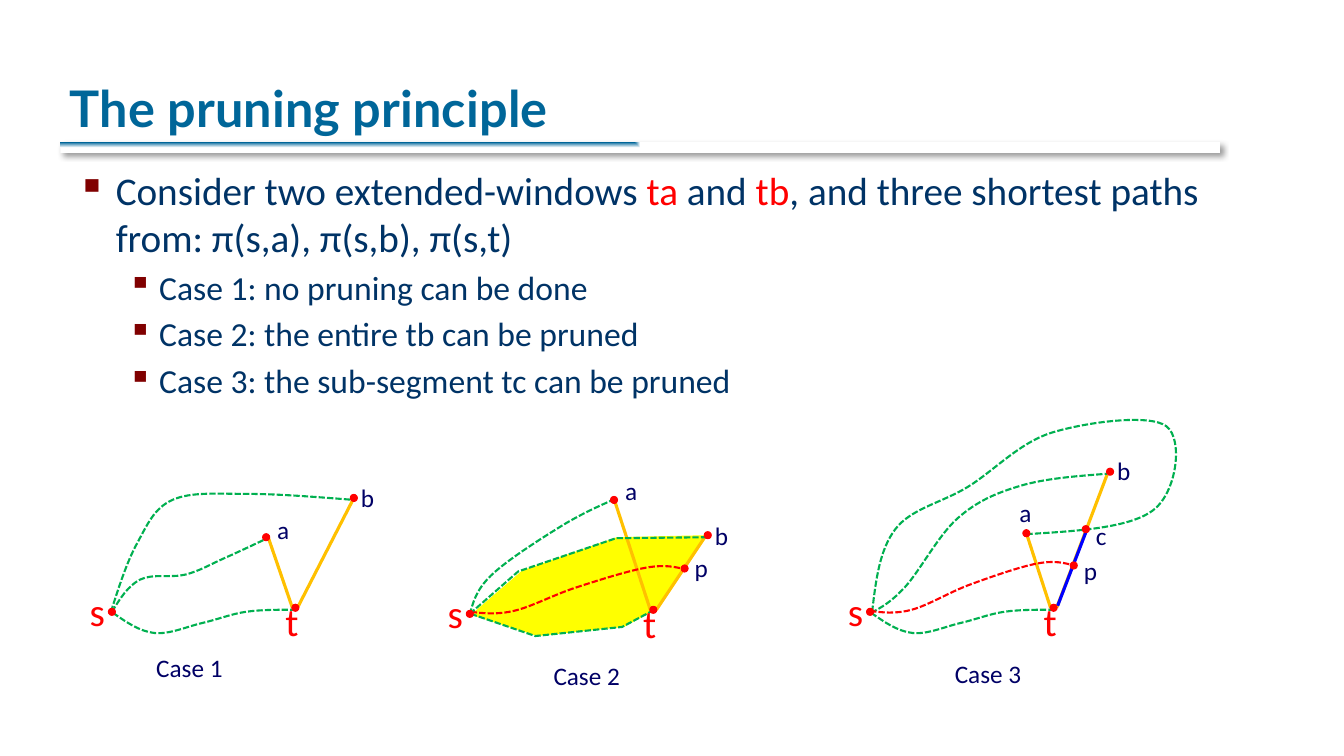
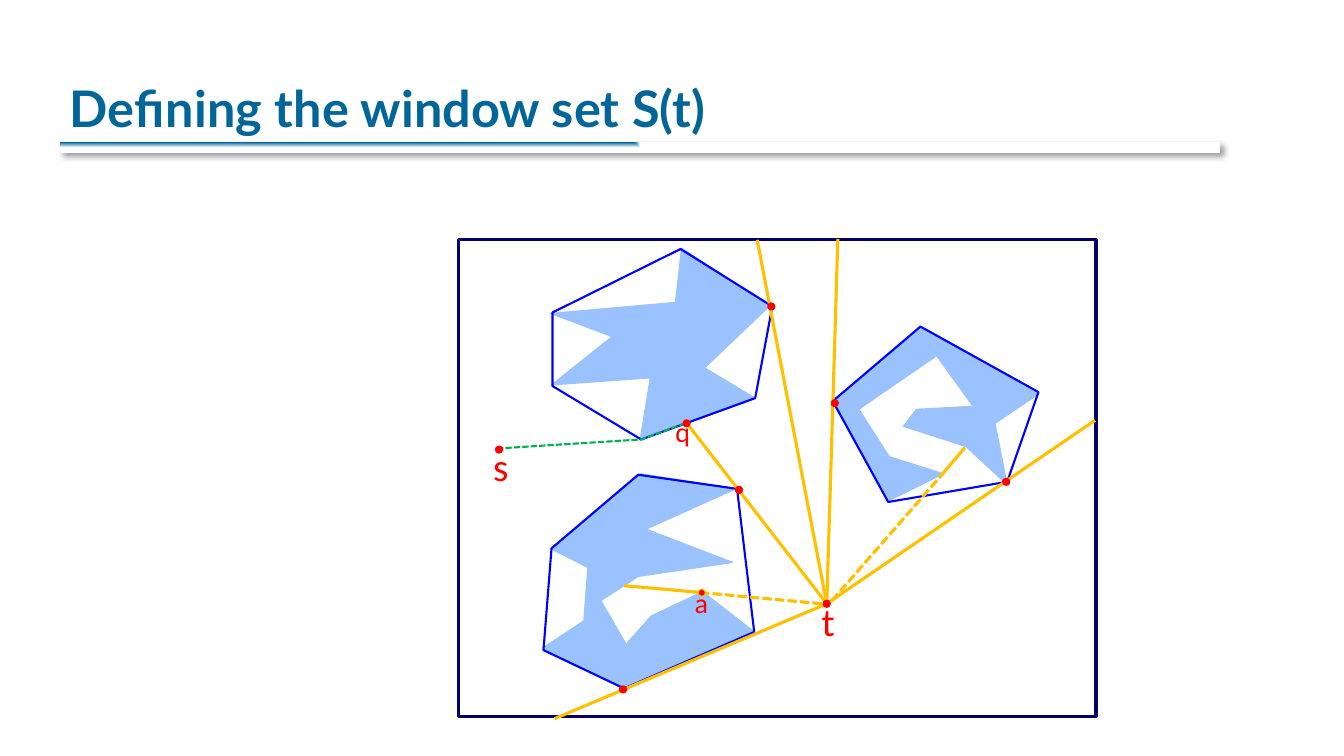
from lxml.etree import SubElement
from pptx import Presentation
from pptx.dml.color import RGBColor
from pptx.enum.dml import MSO_LINE
from pptx.enum.shapes import MSO_CONNECTOR, MSO_SHAPE
from pptx.enum.text import MSO_ANCHOR, MSO_AUTO_SIZE, PP_ALIGN
from pptx.oxml import parse_xml
from pptx.oxml.ns import nsdecls, qn
from pptx.util import Cm, Pt

COLORS = {
    "title": "006699", "body": "003366", "bullet": "800000", "label": "000066",
    "red": "FF0000", "green": "00B050", "orange": "FFC000", "blue": "0000FF",
    "yellow": "FFFF00", "obstacle": "99C2FF", "white": "FFFFFF", "black": "000000",
}
DOT = 0.07


def inch(value):
    """Return a grid length in inches as Cm."""
    return Cm(value * 2.54)


def rgb(name):
    """Look up a named colour."""
    return RGBColor.from_string(COLORS[name])


def add_run(p, text, size=18, color="label", font="Calibri", bold=False, spacing=None):
    """Append a formatted run to a paragraph."""
    r = p.add_run()
    r.text = text
    r.font.name, r.font.size, r.font.bold = font, Pt(size), bold
    r.font.color.rgb = rgb(color)
    if spacing is not None:
        r.font._element.set("spc", str(spacing))


def add_bullet(tf, runs, size, margin, hang):
    """Add a bulleted paragraph made of (text, colour) runs."""
    p = tf.paragraphs[0] if not tf.text else tf.add_paragraph()
    p.space_before = Pt(4.5)
    pPr = p._p.get_or_add_pPr()
    pPr.set("marL", str(inch(margin)))
    pPr.set("indent", str(-inch(hang)))
    SubElement(SubElement(pPr, qn("a:buClr")), qn("a:srgbClr"), val=COLORS["bullet"])
    SubElement(pPr, qn("a:buChar"), char="▪")
    for text, color in runs:
        add_run(p, text, size=size, color=color)


def add_label(s, text, x, y, size=18, color="label", width=0.3):
    """Add a short label whose text starts at x."""
    height = size * 1.22 / 72 + 0.1
    tf = s.shapes.add_textbox(inch(x), inch(y), inch(width), inch(height)).text_frame
    tf.word_wrap = True
    tf.margin_left = tf.margin_right = 0
    add_run(tf.paragraphs[0], text, size=size, color=color)


def add_dot(s, x, y, outline="red"):
    """Add a red point centred on x, y."""
    sp = s.shapes.add_shape(MSO_SHAPE.OVAL, inch(x - DOT / 2), inch(y - DOT / 2),
                            inch(DOT), inch(DOT))
    sp.shadow.inherit = False
    sp.fill.solid()
    sp.fill.fore_color.rgb = rgb("red")
    stroke(sp.line, outline, 0.75)


def stroke(line, color, width, dashed=False):
    """Format an outline."""
    line.color.rgb = rgb(color)
    line.width = Pt(width)
    if dashed:
        line.dash_style = MSO_LINE.SQUARE_DOT


def add_segment(s, start, end, color="orange", dashed=False):
    """Add a straight line between two points."""
    cn = s.shapes.add_connector(MSO_CONNECTOR.STRAIGHT, *map(inch, start + end))
    stroke(cn.line, color, 2.25, dashed)
    SubElement(cn.element.spPr, qn("a:effectLst"))


def add_outline(s, points, close=False, fill=None, color=None, width=1.5, dashed=False):
    """Add a polyline or polygon through the points."""
    pts = [(inch(x), inch(y)) for x, y in points]
    builder = s.shapes.build_freeform(*pts[0], scale=1.0)
    builder.add_line_segments(pts[1:], close=close)
    sp = builder.convert_to_shape()
    sp.shadow.inherit = False
    if fill:
        sp.fill.solid()
        sp.fill.fore_color.rgb = rgb(fill)
    else:
        sp.fill.background()
    if color:
        stroke(sp.line, color, width, dashed)
    else:
        sp.line.fill.background()
    return sp


def add_curve(s, points, color="green"):
    """Add a dashed smooth curve through three or more points."""
    sp = add_outline(s, points, color=color, dashed=True)
    geom = next(sp.element.iter(qn("a:path")))
    pts = [(int(pt.get("x")), int(pt.get("y"))) for pt in geom.iter(qn("a:pt"))]

    def beyond(a, b, c):
        return tuple(2.5 * i - 2 * j + 0.5 * k for i, j, k in zip(a, b, c))

    chain = [beyond(*pts[:3]), *pts, beyond(*pts[:-4:-1])]
    for i, seg in enumerate(geom.findall(qn("a:lnTo"))):
        p0, p1, p2, p3 = chain[i:i + 4]
        first = [b + (c - a) / 6 for a, b, c in zip(p0, p1, p2)]
        second = [c - (d - b) / 6 for b, c, d in zip(p1, p2, p3)]
        geom.remove(seg)
        bezier = SubElement(geom, qn("a:cubicBezTo"))
        for x, y in (first, second, p2):
            SubElement(bezier, qn("a:pt"), x=str(round(x)), y=str(round(y)))


def add_band(s):
    """Add the shaded rule below the title."""
    sp = s.shapes.add_shape(MSO_SHAPE.RECTANGLE, *map(inch, (0.6, 1.41, 11.5, 0.11)))
    sp.line.fill.background()
    spPr = sp.element.spPr
    spPr.insert(2, parse_xml(
        f'<a:gradFill {nsdecls("a")} rotWithShape="0"><a:gsLst>'
        f'<a:gs pos="0"><a:srgbClr val="{COLORS["title"]}"/></a:gs>'
        f'<a:gs pos="100000"><a:srgbClr val="{COLORS["white"]}"/></a:gs></a:gsLst>'
        '<a:path path="rect"><a:fillToRect r="100000" b="100000"/></a:path></a:gradFill>'))
    spPr.append(parse_xml(
        f'<a:effectLst {nsdecls("a")}><a:outerShdw blurRad="50800" dist="38100" '
        'dir="2700000" algn="tl" rotWithShape="0">'
        f'<a:srgbClr val="{COLORS["black"]}"><a:alpha val="40000"/></a:srgbClr>'
        '</a:outerShdw></a:effectLst>'))


def add_slide(prs, title):
    """Add a slide with the shared title and band."""
    s = prs.slides.add_slide(prs.slide_layouts[5])
    add_band(s)
    sp = s.shapes.title
    sp.left, sp.top, sp.width, sp.height = map(inch, (0.59, 0.17, 11.33, 1.25))
    tf = sp.text_frame
    tf.word_wrap = True
    tf.auto_size = MSO_AUTO_SIZE.NONE
    tf.vertical_anchor = MSO_ANCHOR.BOTTOM
    p = tf.paragraphs[0]
    p.alignment = PP_ALIGN.LEFT
    add_run(p, title, size=36, color="title", font="Lato", bold=True, spacing=10)
    return s


def add_body(s):
    """Add the bulleted description of the cases."""
    tf = s.shapes.add_textbox(*map(inch, (0.67, 1.6, 11.93, 2.5))).text_frame
    tf.word_wrap = True
    add_bullet(tf, [("Consider two extended-windows ", "body"), ("ta", "red"),
                    (" and ", "body"), ("tb", "red"),
                    (", and three shortest paths from: π(s,a), π(s,b), π(s,t)", "body")],
               28, 0.38, 0.38)
    for text in ("Case 1: no pruning can be done",
                 "Case 2: the entire tb can be pruned",
                 "Case 3: the sub-segment tc can be pruned"):
        add_bullet(tf, [(text, "body")], 24, 0.81, 0.31)


def add_case(s, caption, caption_at, source, points, labels):
    """Add the caption, endpoints s and t, and named points of one case."""
    x, y = source
    add_label(s, caption, *caption_at, width=0.9)
    add_label(s, "s", x - 0.22, y - 0.29, size=28, color="red")
    add_label(s, "t", x + 1.72, y - 0.19, size=28, color="red")
    for text, lx, ly in labels:
        add_label(s, text, lx, ly)
    for px, py in [source, (x + 1.82, y - 0.04), *points]:
        add_dot(s, px, py)


def add_pruning_slide(prs):
    """Build the slide on the three pruning cases."""
    s = add_slide(prs, "The pruning principle")
    add_outline(s, [(4.67, 6.1), (5.33, 6.31), (6.19, 6.22), (6.5, 6.05), (7.01, 5.31),
                    (6.12, 5.33), (5.18, 5.66)], close=True, fill="yellow")
    add_body(s)

    for start, end in [((2.95, 6.03), (3.51, 4.94)), ((2.9, 6.03), (2.66, 5.33)),
                       ((6.51, 6.05), (6.99, 5.33)), ((6.45, 6.05), (6.1, 4.98)),
                       ((10.48, 6.03), (10.98, 4.71)), ((10.42, 6.03), (10.18, 5.29))]:
        add_segment(s, start, end)
    add_segment(s, (10.49, 6.01), (10.77, 5.28), color="blue")

    for dx in (0, 7.52):
        add_curve(s, [(x + dx, y) for x, y in
                      [(1.12, 6.08), (1.53, 6.28), (2.01, 6.18), (2.44, 6.07), (2.91, 6.05)]])
    for points in [
        [(1.11, 6.07), (1.39, 5.75), (1.84, 5.7), (2.22, 5.54), (2.63, 5.35)],
        [(1.1, 6.07), (1.36, 5.39), (1.71, 4.96), (2.45, 4.9), (3.51, 4.96)],
        [(6.1, 4.95), (5.55, 5.23), (4.87, 5.71), (4.66, 6.1)],
        [(8.65, 6.07), (8.88, 5.25), (9.6, 4.83), (10.44, 4.29), (11.57, 4.23),
         (11.44, 5.06), (10.17, 5.3)],
        [(8.64, 6.08), (8.98, 5.82), (9.5, 5.14), (10.12, 4.82), (10.98, 4.7)],
    ]:
        add_curve(s, points)
    for points in [[(4.67, 6.07), (5.1, 6.06), (5.71, 5.83), (6.42, 5.63), (6.8, 5.65)],
                   [(8.63, 6.06), (9.04, 6.05), (9.62, 5.8), (10.29, 5.59), (10.65, 5.61)]]:
        add_curve(s, points, color="red")
    for points in [[(4.66, 6.09), (5.14, 5.67), (6.11, 5.34), (7.03, 5.33)],
                   [(4.67, 6.09), (5.31, 6.31), (6.17, 6.22), (6.47, 6.06)]]:
        add_outline(s, points, color="green", dashed=True)

    add_case(s, "Case 1", (1.55, 6.42), (1.11, 6.07), [(2.64, 5.33), (3.51, 4.94)],
             [("a", 2.75, 5.05), ("b", 3.58, 4.74)])
    add_case(s, "Case 2", (5.49, 6.5), (4.66, 6.09),
             [(6.09, 4.96), (7.02, 5.31), (6.79, 5.64)],
             [("a", 6.2, 4.67), ("b", 7.09, 5.11), ("p", 6.89, 5.43)])
    add_case(s, "Case 3", (9.47, 6.48), (8.63, 6.07),
             [(10.18, 5.29), (11.01, 4.68), (10.77, 5.25), (10.65, 5.61)],
             [("a", 10.11, 4.88), ("b", 11.08, 4.47), ("c", 10.87, 5.11), ("p", 10.75, 5.46)])


def add_window_slide(prs):
    """Build the slide on the windows seen from t."""
    s = add_slide(prs, "Defining the window set S(t)")
    obstacles = [
        [(10.3, 3.91), (9.14, 3.25), (8.26, 3.99), (8.81, 4.97), (9.36, 4.7), (8.82, 4.53),
         (8.52, 4.06), (9.29, 3.53), (9.65, 4.03), (9.09, 4.06), (8.96, 4.23), (9.58, 4.43),
         (9.99, 4.81), (9.87, 4.2)],
        [(6.7, 3), (5.46, 3.11), (6.07, 3.34), (5.47, 3.82), (6.45, 3.75), (6.35, 4.36),
         (7.49, 3.95), (6.99, 3.65), (7.63, 3.04), (6.76, 2.46)],
        [(5.47, 5.45), (6.36, 4.7), (7.3, 4.85), (6.41, 5.25), (7.27, 5.58), (6.33, 5.72),
         (5.96, 5.96), (6.21, 6.39), (6.46, 6.11), (6.97, 5.87), (7.47, 6.26), (6.2, 6.83),
         (5.38, 6.43), (5.79, 6.16), (5.83, 5.63)],
    ]
    hulls = [
        [(6.36, 4.36), (5.48, 3.83), (5.48, 3.1), (6.75, 2.47), (7.66, 3.04), (7.49, 3.95)],
        [(7.48, 6.27), (7.31, 4.85), (6.33, 4.71), (5.47, 5.44), (5.39, 6.45), (6.19, 6.83)],
        [(8.81, 4.98), (8.26, 3.98), (9.13, 3.24), (10.3, 3.89), (9.99, 4.78)],
    ]
    for points in obstacles:
        add_outline(s, points, close=True, fill="obstacle", color="obstacle", width=0.75)
    for points in hulls:
        add_outline(s, points, close=True, color="blue")

    frame = s.shapes.add_shape(MSO_SHAPE.RECTANGLE, *map(inch, (4.55, 2.38, 6.32, 4.73)))
    frame.shadow.inherit = False
    frame.fill.background()
    stroke(frame.line, "label", 2.25)

    t = (8.2, 5.99)
    for end in [(6.79, 4.17), (8.31, 2.37), (7.51, 2.38), (10.86, 4.17), (5.5, 7.13)]:
        add_segment(s, t, end)
    for start, turn, end in [((8.15, 5.99), (6.97, 5.88), (6.19, 5.81)),
                             ((8.25, 5.96), (9.35, 4.7), (9.57, 4.44))]:
        add_segment(s, start, turn, dashed=True)
        add_segment(s, turn, end)
    add_outline(s, [(4.93, 4.45), (6.36, 4.36), (6.82, 4.19)], color="green", dashed=True)

    for text, x, y, size in [("a", 6.89, 5.76, 20), ("q", 6.7, 4.06, 20),
                             ("t", 8.15, 5.88, 28), ("s", 4.89, 4.34, 28)]:
        add_label(s, text, x, y, size=size, color="red")
    add_dot(s, 6.96, 5.88, outline="orange")
    for x, y in [t, (6.81, 4.2), (4.95, 4.46), (9.98, 4.78), (8.28, 4),
                 (7.65, 3.04), (7.33, 4.86), (6.18, 6.84)]:
        add_dot(s, x, y)


def main():
    """Build and save the presentation."""
    prs = Presentation()
    prs.slide_width, prs.slide_height = inch(13.33), inch(7.5)
    add_pruning_slide(prs)
    add_window_slide(prs)
    prs.save("out.pptx")


if __name__ == "__main__":
    main()
